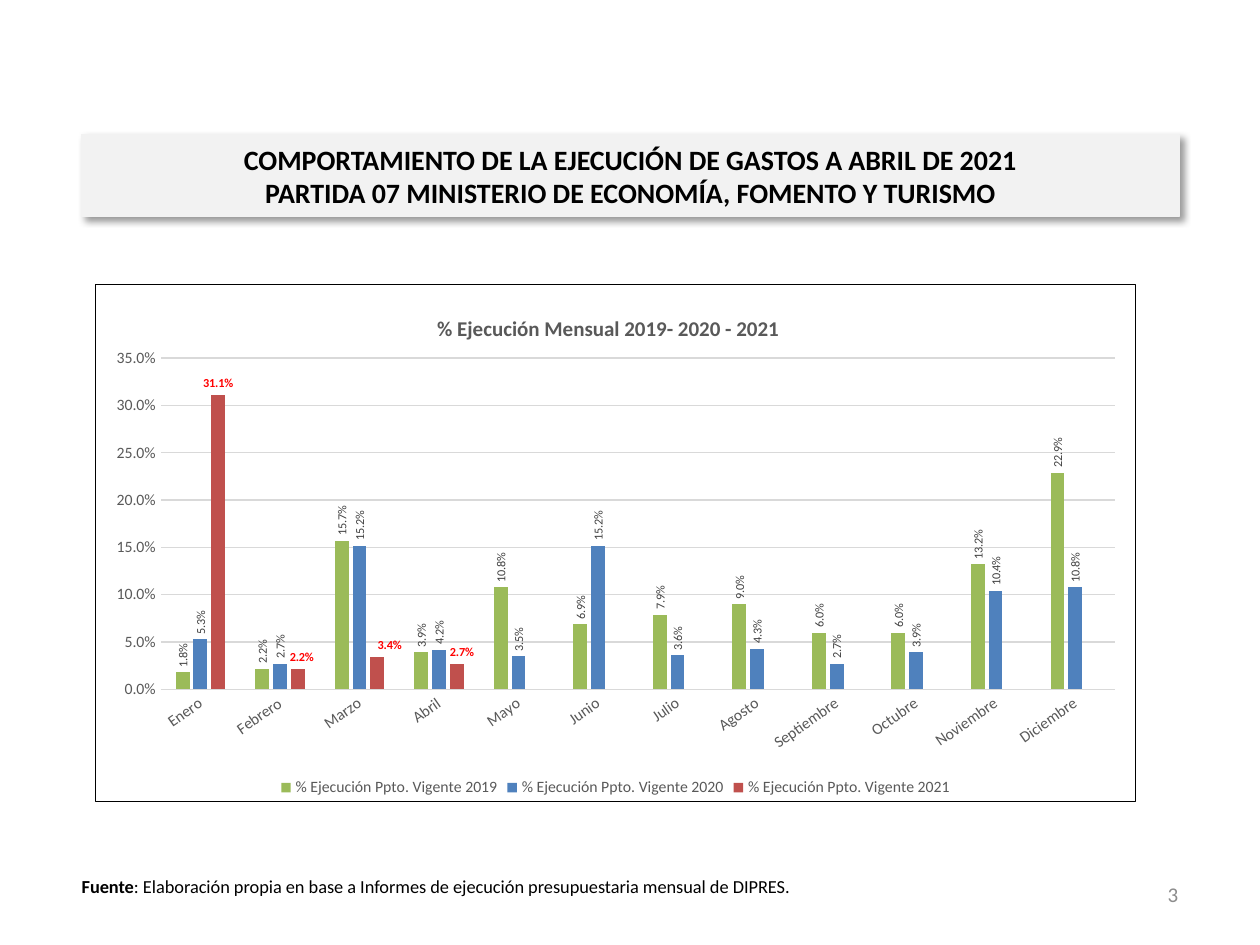
from lxml import etree
from pptx import Presentation
from pptx.chart.data import CategoryChartData
from pptx.dml.color import RGBColor
from pptx.enum import chart as ch, text
from pptx.oxml import parse_xml
from pptx.oxml.ns import nsdecls, qn
from pptx.util import Pt

BLACK = RGBColor(0x00, 0x00, 0x00)
WHITE = RGBColor(0xFF, 0xFF, 0xFF)
BANNER = RGBColor(0xF2, 0xF2, 0xF2)
GRID = RGBColor(0xD9, 0xD9, 0xD9)
GREY = RGBColor(0x59, 0x59, 0x59)
LABEL = RGBColor(0x40, 0x40, 0x40)
NUMBER = RGBColor(0x8C, 0x8C, 0x8C)
GREEN = RGBColor(0x9B, 0xBB, 0x59)
BLUE = RGBColor(0x4F, 0x81, 0xBD)
DARK_RED = RGBColor(0xC0, 0x50, 0x4D)
RED = RGBColor(0xFF, 0x00, 0x00)


def style(content, p=None, font=None, size=10, color=BLACK, bold=False):
    """Add a run with this content to p, or format the given font."""
    if p is not None:
        r = p.add_run()
        r.text = content
        font = r.font
    font.name, font.size, font.bold = "Calibri", Pt(size), bold
    font.color.rgb = color


def set_layout(parent, index, **values):
    """Place a chart part by fractions of the chart size."""
    for old in parent.findall(qn("c:layout")):
        parent.remove(old)
    layout = etree.Element(qn("c:layout"))
    manual = etree.SubElement(layout, qn("c:manualLayout"))
    for name, value in values.items():
        etree.SubElement(manual, qn("c:" + name)).set("val", str(value))
    parent.insert(index, layout)


prs = Presentation()
prs.slide_width, prs.slide_height = Pt(720), Pt(540)
s = prs.slides.add_slide(prs.slide_layouts[5])

# Title banner with shadow
sp = s.shapes.title
sp.left, sp.top, sp.width, sp.height = Pt(46.8), Pt(77), Pt(627), Pt(46.8)
sp.fill.solid()
sp.fill.fore_color.rgb = BANNER
sp.line.color.rgb = BANNER
sp.line.width = Pt(0.75)
sp._element.spPr.append(parse_xml(
    f'<a:effectLst {nsdecls("a")}><a:outerShdw blurRad="50800" dist="38100" dir="2700000" '
    'algn="tl" rotWithShape="0"><a:srgbClr val="000000"><a:alpha val="40000"/></a:srgbClr>'
    '</a:outerShdw></a:effectLst>'))
tf = sp.text_frame
tf.auto_size = text.MSO_AUTO_SIZE.NONE
tf.vertical_anchor = text.MSO_ANCHOR.MIDDLE
p = tf.paragraphs[0]
p.alignment = text.PP_ALIGN.CENTER
style("COMPORTAMIENTO DE LA EJECUCIÓN DE GASTOS A ABRIL DE 2021", p, size=16, bold=True)
p.add_line_break()
style("PARTIDA 07 MINISTERIO DE ECONOMÍA, FOMENTO Y TURISMO", p, size=16, bold=True)

# Monthly chart
data = CategoryChartData(number_format="0.0%")
data.categories = ["Enero", "Febrero", "Marzo", "Abril", "Mayo", "Junio", "Julio",
                   "Agosto", "Septiembre", "Octubre", "Noviembre", "Diciembre"]
years = {
    2019: (0.018, 0.022, 0.157, 0.039, 0.108, 0.069, 0.079, 0.09, 0.06, 0.06, 0.132, 0.229),
    2020: (0.053, 0.027, 0.152, 0.042, 0.035, 0.152, 0.036, 0.043, 0.027, 0.039, 0.104, 0.108),
    2021: (0.311, 0.022, 0.034, 0.027),
}
for year, values in years.items():
    data.add_series(f"% Ejecución Ppto. Vigente {year}", values + (None,) * (12 - len(values)))
chart = s.shapes.add_chart(ch.XL_CHART_TYPE.COLUMN_CLUSTERED, Pt(54), Pt(162),
                           Pt(595.4), Pt(296.6), data).chart
style("", font=chart.font)
chart._chartSpace.chart.addnext(parse_xml(
    f'<c:spPr {nsdecls("c", "a")}><a:solidFill><a:srgbClr val="{WHITE}"/></a:solidFill>'
    f'<a:ln w="9525"><a:solidFill><a:srgbClr val="{BLACK}"/></a:solidFill></a:ln></c:spPr>'))
set_layout(chart._chartSpace.chart.plotArea, 0, layoutTarget="inner", xMode="edge",
           yMode="edge", x=0.063, y=0.143, w=0.917, h=0.64)

# Chart title and legend
chart.has_title = True
p = chart.chart_title.text_frame.paragraphs[0]
style("% Ejecución Mensual 2019- 2020 - 2021", p, size=12, color=GREY, bold=True)
set_layout(chart.chart_title._element, 1, xMode="edge", yMode="edge", x=0.325, y=0.05)
chart.has_legend = True
chart.legend.position = ch.XL_LEGEND_POSITION.BOTTOM
chart.legend.include_in_layout = False
style("", font=chart.legend.font, size=9, color=GREY)

# Axes
for axis in (chart.category_axis, chart.value_axis):
    axis.major_tick_mark = axis.minor_tick_mark = ch.XL_TICK_MARK.NONE
    style("", font=axis.tick_labels.font, size=9, color=GREY)
cat, val = chart.category_axis, chart.value_axis
cat.format.line.color.rgb = GRID
cat.format.line.width = Pt(0.75)
cat._element.find(qn("c:txPr")).find(qn("a:bodyPr")).set("rot", "-2100000")
val.minimum_scale, val.maximum_scale, val.major_unit = 0, 0.35, 0.05
val.tick_labels.number_format = "0.0%"
val.tick_labels.number_format_is_linked = False
val.format.line.fill.background()
val.major_gridlines.format.line.color.rgb = GRID
val.major_gridlines.format.line.width = Pt(0.75)

# Columns and their labels
plot = chart.plots[0]
plot.gap_width, plot.overlap, plot.vary_by_categories = 219, -27, False
for series, color in zip(plot.series, (GREEN, BLUE, DARK_RED)):
    series.format.fill.solid()
    series.format.fill.fore_color.rgb = color
    labels = series.data_labels
    labels.show_value = True
    labels.number_format = "0.0%"
    labels.number_format_is_linked = False
    labels.position = ch.XL_LABEL_POSITION.OUTSIDE_END
    current = color == DARK_RED
    style("", font=labels.font, size=7, color=RED if current else LABEL, bold=current)
    if not current:
        body = labels._element.find(qn("c:txPr")).find(qn("a:bodyPr"))
        body.set("rot", "-5400000")
        body.set("vert", "horz")

# Labels of 2021 moved clear of the neighbouring columns
for month, shift in ((1, 0.004), (2, 0.012), (3, 0.005)):
    label = plot.series[2].points[month].data_label
    style("", font=label.font, size=7, color=RED, bold=True)
    label.position = ch.XL_LABEL_POSITION.OUTSIDE_END
    set_layout(plot.series[2].data_labels._element.findall(qn("c:dLbl"))[-1], 1, x=shift, y=0)

# Source note and slide number
footers = (
    (39.6, 648, text.PP_ALIGN.LEFT, text.MSO_ANCHOR.TOP, (
        ("Fuente", 10.5, BLACK, True),
        (": Elaboración propia en base a Informes de ejecución presupuestaria mensual de DIPRES.",
         10.5, BLACK, False))),
    (512.6, 167.8, text.PP_ALIGN.RIGHT, text.MSO_ANCHOR.MIDDLE, (("3", 12, NUMBER, False),)),
)
for left, width, align, anchor, runs in footers:
    tf = s.shapes.add_textbox(Pt(left), Pt(496.8), Pt(width), Pt(28.8)).text_frame
    tf.word_wrap = True
    tf.vertical_anchor = anchor
    p = tf.paragraphs[0]
    p.alignment = align
    for content, size, color, bold in runs:
        style(content, p, size=size, color=color, bold=bold)

prs.save("out.pptx")
